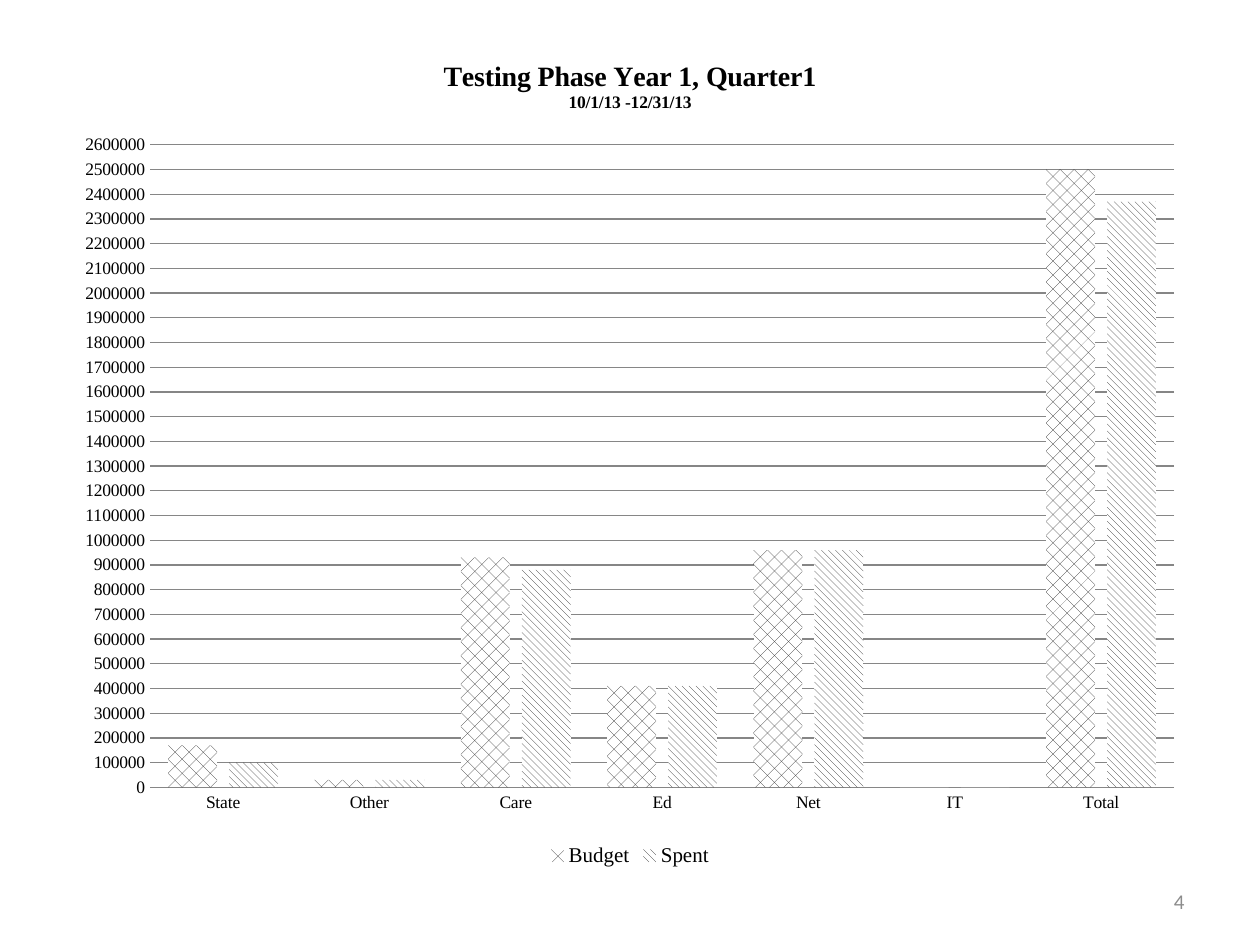
from dataclasses import dataclass

from lxml import etree
from pptx import Presentation
from pptx.chart.data import CategoryChartData
from pptx.dml.color import RGBColor
from pptx.enum.chart import XL_CHART_TYPE, XL_LEGEND_POSITION, XL_TICK_MARK
from pptx.enum.dml import MSO_PATTERN
from pptx.enum.text import MSO_ANCHOR, PP_ALIGN
from pptx.oxml.ns import qn
from pptx.util import Inches, Pt

COLUMNS = XL_CHART_TYPE.COLUMN_CLUSTERED
BOTTOM = XL_LEGEND_POSITION.BOTTOM
NO_TICK = XL_TICK_MARK.NONE
PATTERNS = (MSO_PATTERN.PERCENT_25, MSO_PATTERN.WIDE_DOWNWARD_DIAGONAL)
MIDDLE = MSO_ANCHOR.MIDDLE
RIGHT = PP_ALIGN.RIGHT

CATEGORIES = ("State", "Other", "Care", "Ed", "Net", "IT", "Total")
SERIES = {
    "Budget": (170000, 30000, 930000, 410000, 960000, 0, 2500000),
    "Spent": (100000, 30000, 880000, 410000, 960000, 0, 2370000),
}
CHART_BOX = (0.5, 0.25, 9, 6.67)
PLOT_BOX = (0.69, 0.9, 8.13, 5.1)


@dataclass(frozen=True)
class Theme:
    text: RGBColor = RGBColor(0, 0, 0)
    muted: RGBColor = RGBColor(0x8C, 0x8C, 0x8C)
    grid: RGBColor = RGBColor(0x86, 0x86, 0x86)
    ink: RGBColor = RGBColor(0x26, 0x26, 0x26)
    paper: RGBColor = RGBColor(0xFF, 0xFF, 0xFF)
    serif: str = "Times New Roman"
    sans: str = "Calibri"
    title: int = 16
    legend: int = 12
    number: int = 12
    label: int = 10


class SlideBuilder:
    """Draws styled elements on the current slide."""

    def __init__(self, slide, theme):
        self.slide = slide
        self.theme = theme

    def style(self, font, size, name, color, bold=False):
        font.size, font.name, font.bold = Pt(size), name, bold
        font.color.rgb = color

    def page_number(self, text, left, top, width, height):
        t = self.theme
        box = self.slide.shapes.add_textbox(*map(Inches, (left, top, width, height)))
        tf = box.text_frame
        tf.word_wrap = True
        tf.vertical_anchor = MIDDLE
        tf.text = text
        p = tf.paragraphs[0]
        p.alignment = RIGHT
        self.style(p.runs[0].font, t.number, t.sans, t.muted)

    def column_chart(self, lines, box, plot_box):
        t = self.theme
        data = CategoryChartData()
        data.categories = CATEGORIES
        for name, values in SERIES.items():
            data.add_series(name, values)
        chart = self.slide.shapes.add_chart(COLUMNS, *map(Inches, box), data).chart
        self.style(chart.font, t.label, t.serif, t.text)
        self.chart_title(chart, lines)
        self.axes(chart)
        self.legend(chart)
        self.columns(chart.plots[0])
        self.plot_layout(chart, box, plot_box)

    def chart_title(self, chart, lines):
        t = self.theme
        tf = chart.chart_title.text_frame
        tf.text = "\n".join(lines)
        for p, size in zip(tf.paragraphs, (t.title, t.label)):
            self.style(p.runs[0].font, size, t.serif, t.text, bold=True)
        chart.chart_title.include_in_layout = False

    def axes(self, chart):
        t = self.theme
        for axis in (chart.category_axis, chart.value_axis):
            axis.major_tick_mark = axis.minor_tick_mark = NO_TICK
            self.style(axis.tick_labels.font, t.label, t.serif, t.text)
        chart.category_axis.format.line.color.rgb = t.grid
        values = chart.value_axis
        values.minimum_scale, values.maximum_scale = 0, 2600000
        values.major_unit = 100000
        values.format.line.fill.background()
        values.has_major_gridlines = True
        values.major_gridlines.format.line.color.rgb = t.grid
        values.tick_labels.number_format = "General"
        values.tick_labels.number_format_is_linked = False

    def legend(self, chart):
        t = self.theme
        chart.has_legend = True
        chart.legend.position = BOTTOM
        chart.legend.include_in_layout = False
        self.style(chart.legend.font, t.legend, t.serif, t.text)

    def columns(self, plot):
        plot.gap_width, plot.overlap = 75, -25
        plot.vary_by_categories = False
        for series, pattern in zip(plot.series, PATTERNS):
            fill = series.format.fill
            fill.patterned()
            fill.pattern = pattern
            fill.fore_color.rgb = self.theme.ink
            fill.back_color.rgb = self.theme.paper
            series.format.line.fill.background()

    def plot_layout(self, chart, box, plot_box):
        area = chart.plots[0]._element.getparent()
        for old in area.findall(qn("c:layout")):
            area.remove(old)
        layout = etree.Element(qn("c:layout"))
        area.insert(0, layout)
        manual = etree.SubElement(layout, qn("c:manualLayout"))
        shares = [length / whole for length, whole in zip(plot_box, box[2:] * 2)]
        settings = {"layoutTarget": "inner", "xMode": "edge", "yMode": "edge"}
        settings.update(zip("xywh", shares))
        for tag, value in settings.items():
            etree.SubElement(manual, qn(f"c:{tag}")).set("val", str(value))


def main():
    prs = Presentation()
    prs.slide_width, prs.slide_height = Inches(10), Inches(7.5)
    s = SlideBuilder(prs.slides.add_slide(prs.slide_layouts[6]), Theme())
    s.page_number("4", 7.17, 6.95, 2.33, 0.4)
    s.column_chart(("Testing Phase Year 1, Quarter1", "10/1/13 -12/31/13"), CHART_BOX, PLOT_BOX)
    prs.save("out.pptx")


if __name__ == "__main__":
    main()
